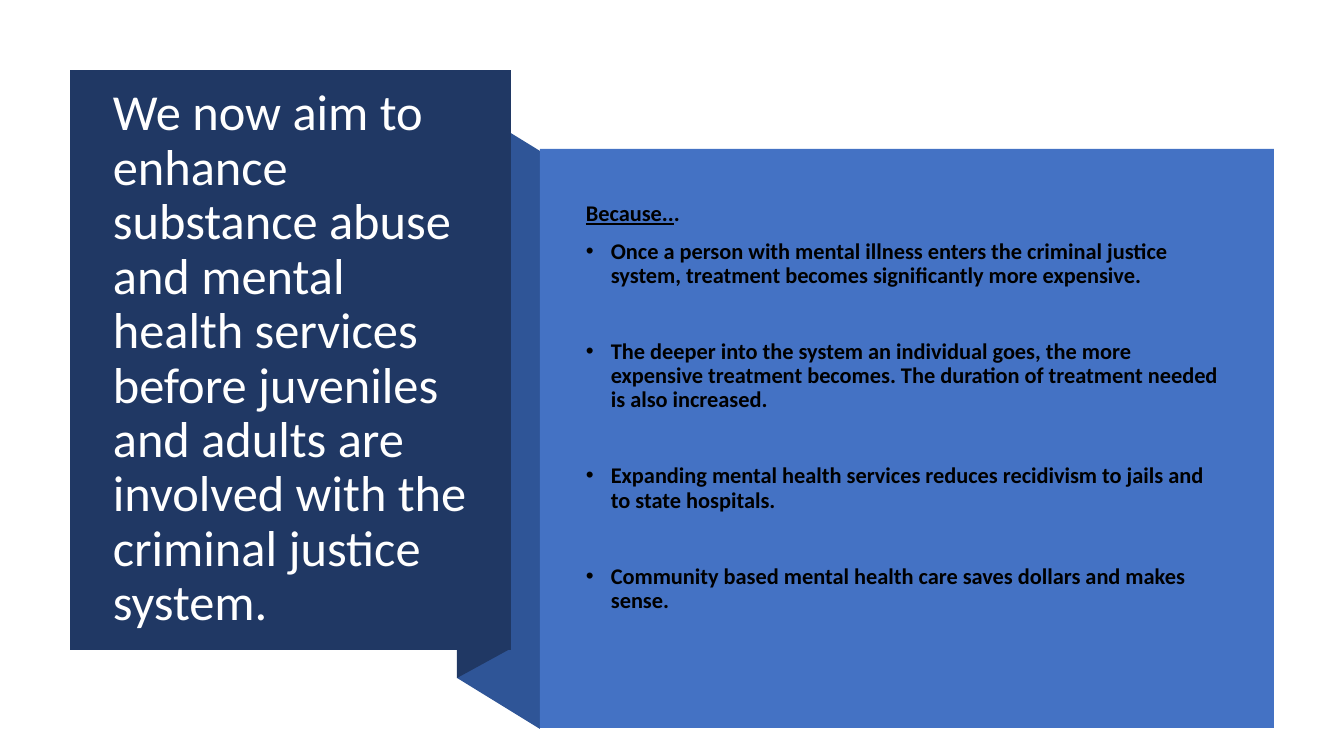
"""Build a slide giving the aim of earlier mental health services and the reasons for it."""
from lxml.etree import SubElement
from pptx import Presentation
from pptx.dml.color import RGBColor
from pptx.enum.shapes import MSO_SHAPE
from pptx.enum.text import MSO_ANCHOR
from pptx.oxml.ns import qn
from pptx.util import Pt

EMU_PER_PX = 914400 / 100.8
PAGE_SIZE = (1344, 756)
FONT = "Calibri"
COLORS = {"panel": "4472C4", "fold": "2F5597", "banner": "203864",
          "light": "FFFFFF", "dark": "000000"}

AIM = ("We now aim to enhance substance abuse and mental health services before "
       "juveniles and adults are involved with the criminal justice system.")
HEADING = ("Because..", ".")
REASONS = [
    "Once a person with mental illness enters the criminal justice system, "
    "treatment becomes significantly more expensive.",
    "The deeper into the system an individual goes, the more expensive treatment "
    "becomes. The duration of treatment needed is also increased.",
    "Expanding mental health services reduces recidivism to jails and to state hospitals.",
    "Community based mental health care saves dollars and makes sense.",
]

FOLDS = [
    ("fold", [(540, 729), (457, 678), (457, 100), (540, 151)]),
    ("banner", [(510, 649), (457, 678), (457, 99), (510, 70)]),
]
BANNER = (70, 70, 441, 580)
PANEL = (540, 149, 734, 579)
AIM_BOX = (103, 108, 374, 503)
REASONS_BOX = (576, 197, 656, 478)
BULLET_INDENT = 25
FIRST_GAP, REASON_GAP = 10, 37


def px(value):
    return round(value * EMU_PER_PX)


def paint(shape, color):
    shape.shadow.inherit = False
    shape.fill.solid()
    shape.fill.fore_color.rgb = RGBColor.from_string(COLORS[color])
    shape.line.fill.background()


def add_fold(page, color, points):
    builder = page.shapes.build_freeform(*points[0], scale=EMU_PER_PX)
    builder.add_line_segments(points[1:], close=True)
    paint(builder.convert_to_shape(), color)


def add_panel(page, color, bounds):
    paint(page.shapes.add_shape(MSO_SHAPE.RECTANGLE, *map(px, bounds)), color)


def add_text_frame(page, bounds, anchor):
    frame = page.shapes.add_textbox(*map(px, bounds)).text_frame
    frame.word_wrap = True
    frame.vertical_anchor = anchor
    return frame


def format_para(para, size, color, bold=False, gap=0):
    para.line_spacing = 0.9
    para.space_before = Pt(gap)
    for span in para.runs:
        span.font.name = FONT
        span.font.size = Pt(size)
        span.font.bold = bold
        span.font.color.rgb = RGBColor.from_string(COLORS[color])


def add_bullet(para):
    properties = para._p.get_or_add_pPr()
    properties.set("marL", str(px(BULLET_INDENT)))
    properties.set("indent", str(-px(BULLET_INDENT)))
    SubElement(properties, qn("a:buFont"), typeface="Arial")
    SubElement(properties, qn("a:buChar"), char="•")


def add_aim(page):
    frame = add_text_frame(page, AIM_BOX, MSO_ANCHOR.MIDDLE)
    frame.text = AIM
    format_para(frame.paragraphs[0], 36, "light")


def add_reasons(page):
    frame = add_text_frame(page, REASONS_BOX, MSO_ANCHOR.TOP)
    heading = frame.paragraphs[0]
    for part in HEADING:
        heading.add_run().text = part
    format_para(heading, 16, "dark", bold=True)
    heading.runs[0].font.underline = True
    for index, reason in enumerate(REASONS):
        para = frame.add_paragraph()
        para.text = reason
        format_para(para, 16, "dark", bold=True, gap=REASON_GAP if index else FIRST_GAP)
        add_bullet(para)


def main():
    deck = Presentation()
    deck.slide_width, deck.slide_height = map(px, PAGE_SIZE)
    page = deck.slides.add_slide(deck.slide_layouts[6])
    for color, points in FOLDS:
        add_fold(page, color, points)
    add_panel(page, "banner", BANNER)
    add_aim(page)
    add_panel(page, "panel", PANEL)
    add_reasons(page)
    deck.save("out.pptx")


if __name__ == "__main__":
    main()
